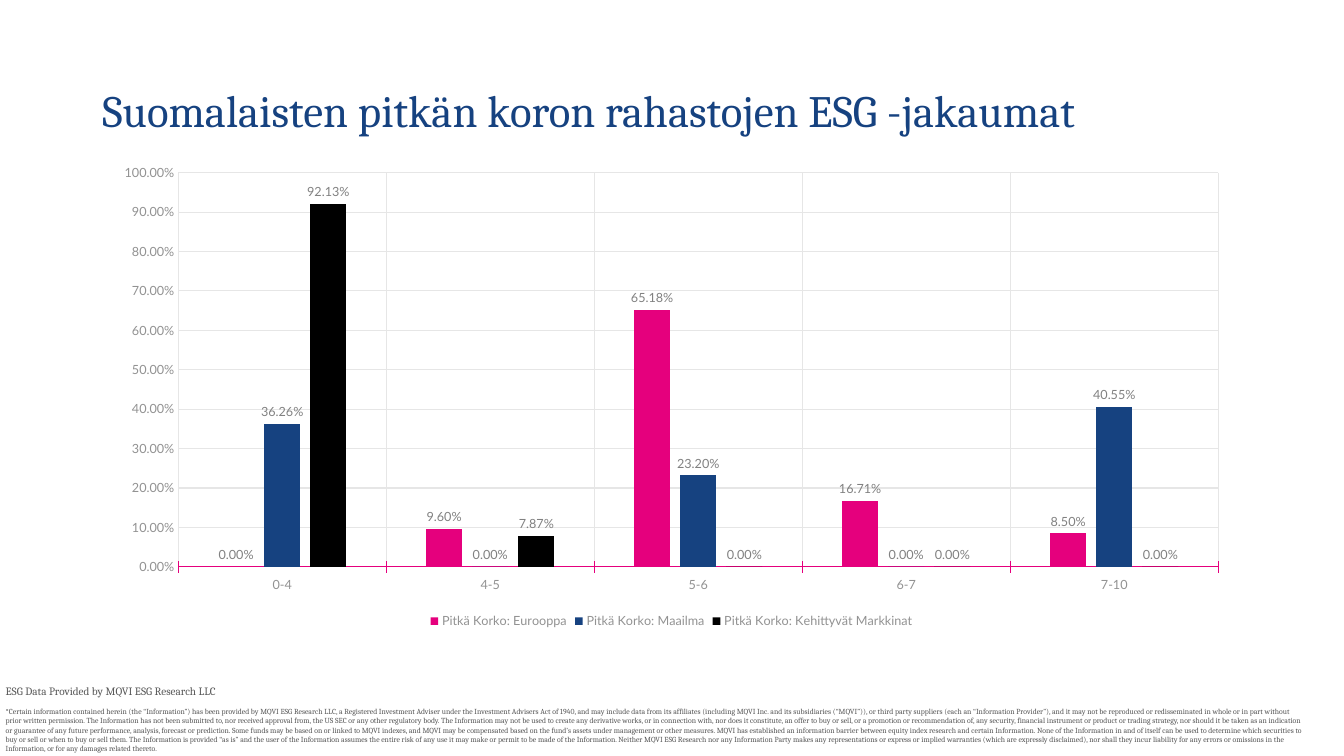
from dataclasses import dataclass

import pptx
import pptx.chart.data
import pptx.dml.color
import pptx.enum.chart
import pptx.enum.text
import pptx.util


@dataclass(frozen=True)
class Theme:
    serif: str = "Cambria"
    sans: str = "Lato"
    pink: str = "E5007D"
    navy: str = "164280"
    black: str = "000000"
    body: str = "575757"
    label: str = "818181"
    axis: str = "929292"
    grid: str = "E6E6E6"
    title_size: float = 32
    chart_size: float = 10
    axis_size: float = 9
    credit_size: float = 8
    notice_size: float = 5.5
    line_width: float = 0.75
    percent: str = "0.00%"


def assign(target, values):
    for name, value in values.items():
        setattr(target, name, value)


def rgb(color):
    return pptx.dml.color.RGBColor.from_string(color)


class SlideBuilder:
    def __init__(self, slide, theme):
        self.slide = slide
        self.theme = theme

    def box(self, *lengths):
        return [pptx.util.Emu(length * EMU_PER_PX) for length in lengths]

    def font(self, target, face, size, color):
        assign(target, {"name": face, "size": pptx.util.Pt(size), "bold": False})
        target.color.rgb = rgb(color)

    def line(self, target, color):
        target.width = pptx.util.Pt(self.theme.line_width)
        target.color.rgb = rgb(color)

    def text(self, place, paragraphs, frame_format):
        frame = self.slide.shapes.add_textbox(*self.box(*place)).text_frame
        assign(frame, {"word_wrap": True, **frame_format})
        for index, (words, size, color, paragraph_format) in enumerate(paragraphs):
            paragraph = frame.add_paragraph() if index else frame.paragraphs[0]
            assign(paragraph, paragraph_format)
            run = paragraph.add_run()
            run.text = words
            self.font(run.font, self.theme.serif, size, color)

    def axis(self, axis, axis_format):
        theme = self.theme
        assign(axis, {"has_major_gridlines": True, **axis_format})
        self.font(axis.tick_labels.font, theme.sans, theme.axis_size, theme.axis)
        self.line(axis.major_gridlines.format.line, theme.grid)

    def column_chart(self, place, categories, funds):
        theme = self.theme
        data = pptx.chart.data.CategoryChartData(number_format=theme.percent)
        data.categories = categories
        for name, color, shares in funds:
            data.add_series(name, shares)
        chart = self.slide.shapes.add_chart(
            pptx.enum.chart.XL_CHART_TYPE.COLUMN_CLUSTERED, *self.box(*place), data
        ).chart
        assign(chart, {"has_title": False, "has_legend": True})
        self.font(chart.font, theme.sans, theme.chart_size, theme.body)
        assign(chart.legend, {
            "position": pptx.enum.chart.XL_LEGEND_POSITION.BOTTOM,
            "include_in_layout": False,
        })
        self.font(chart.legend.font, theme.sans, theme.axis_size, theme.axis)

        tick = pptx.enum.chart.XL_TICK_MARK
        self.axis(chart.category_axis, {
            "major_tick_mark": tick.CROSS, "minor_tick_mark": tick.NONE,
        })
        self.line(chart.category_axis.format.line, theme.pink)
        self.axis(chart.value_axis, {
            "major_tick_mark": tick.NONE, "minor_tick_mark": tick.NONE,
            "minimum_scale": 0, "maximum_scale": 1, "major_unit": 0.1,
        })
        chart.value_axis.format.line.fill.background()
        percent_format = {
            "number_format": theme.percent, "number_format_is_linked": False,
        }
        assign(chart.value_axis.tick_labels, percent_format)

        plot = chart.plots[0]
        assign(plot, {"gap_width": 219, "overlap": -27, "vary_by_categories": False})
        for series, (name, color, shares) in zip(plot.series, funds):
            series.format.fill.solid()
            series.format.fill.fore_color.rgb = rgb(color)
            assign(series.data_labels, {
                "show_value": True,
                "position": pptx.enum.chart.XL_LABEL_POSITION.OUTSIDE_END,
                **percent_format,
            })
            self.font(series.data_labels.font, theme.sans, theme.axis_size, theme.label)


EMU_PER_PX = 9525
ESG_BANDS = ["0-4", "4-5", "5-6", "6-7", "7-10"]
NOTICE_SENTENCES = [
    "*Certain information contained herein (the “Information”) has been provided by "
    "MQVI ESG Research LLC, a Registered Investment Adviser under the Investment "
    "Advisers Act of 1940, and may include data from its affiliates (including MQVI "
    "Inc. and its subsidiaries (“MQVI”)), or third party suppliers (each an "
    "“Information Provider”), and it may not be reproduced or redisseminated in whole "
    "or in part without prior written permission.",
    "The Information has not been submitted to, nor received approval from, the US SEC "
    "or any other regulatory body.",
    "The Information may not be used to create any derivative works, or in "
    "connection with, nor does it constitute, an offer to buy or sell, or a promotion "
    "or recommendation of, any security, financial instrument or product or trading "
    "strategy, nor should it be taken as an indication or guarantee of any future "
    "performance, analysis, forecast or prediction.",
    "Some funds may be based on or linked to MQVI indexes, and MQVI may be compensated "
    "based on the fund’s assets under management or other measures.",
    "MQVI has established an information barrier between equity index research and "
    "certain Information.",
    "None of the Information in and of itself can be used to determine which "
    "securities to buy or sell or when to buy or sell them.",
    "The Information is provided “as is” and the user of the Information assumes the "
    "entire risk of any use it may make or permit to be made of the Information.",
    "Neither MQVI ESG Research nor any Information Party makes any representations or "
    "express or implied warranties (which are expressly disclaimed), nor shall they "
    "incur liability for any errors or omissions in the Information, or for any "
    "damages related thereto.",
]


def main():
    theme = Theme()
    deck = pptx.Presentation()
    assign(deck, {"slide_width": 1280 * EMU_PER_PX, "slide_height": 720 * EMU_PER_PX})
    builder = SlideBuilder(deck.slides.add_slide(deck.slide_layouts[6]), theme)

    headline = "Suomalaisten pitkän koron rahastojen ESG -jakaumat"
    builder.text(
        (88, 38, 1104, 139),
        [(headline, theme.title_size, theme.navy, {"line_spacing": 0.9})],
        {"vertical_anchor": pptx.enum.text.MSO_ANCHOR.MIDDLE},
    )
    builder.column_chart((97, 148, 1085, 455), ESG_BANDS, [
        ("Pitkä Korko: Eurooppa", theme.pink, [0, 0.096, 0.6518, 0.1671, 0.085]),
        ("Pitkä Korko: Maailma", theme.navy, [0.3626, 0, 0.232, 0, 0.4055]),
        ("Pitkä Korko: Kehittyvät Markkinat", theme.black, [0.9213, 0.0787, 0, 0, 0]),
    ])
    credit = "ESG Data Provided by MQVI ESG Research LLC"
    builder.text(
        (-4, 647, 1257, 76),
        [
            (credit, theme.credit_size, theme.body, {}),
            (" ".join(NOTICE_SENTENCES), theme.notice_size, theme.body,
             {"space_before": pptx.util.Pt(6.5)}),
        ],
        {"auto_size": pptx.enum.text.MSO_AUTO_SIZE.SHAPE_TO_FIT_TEXT},
    )
    deck.save("out.pptx")


if __name__ == "__main__":
    main()
